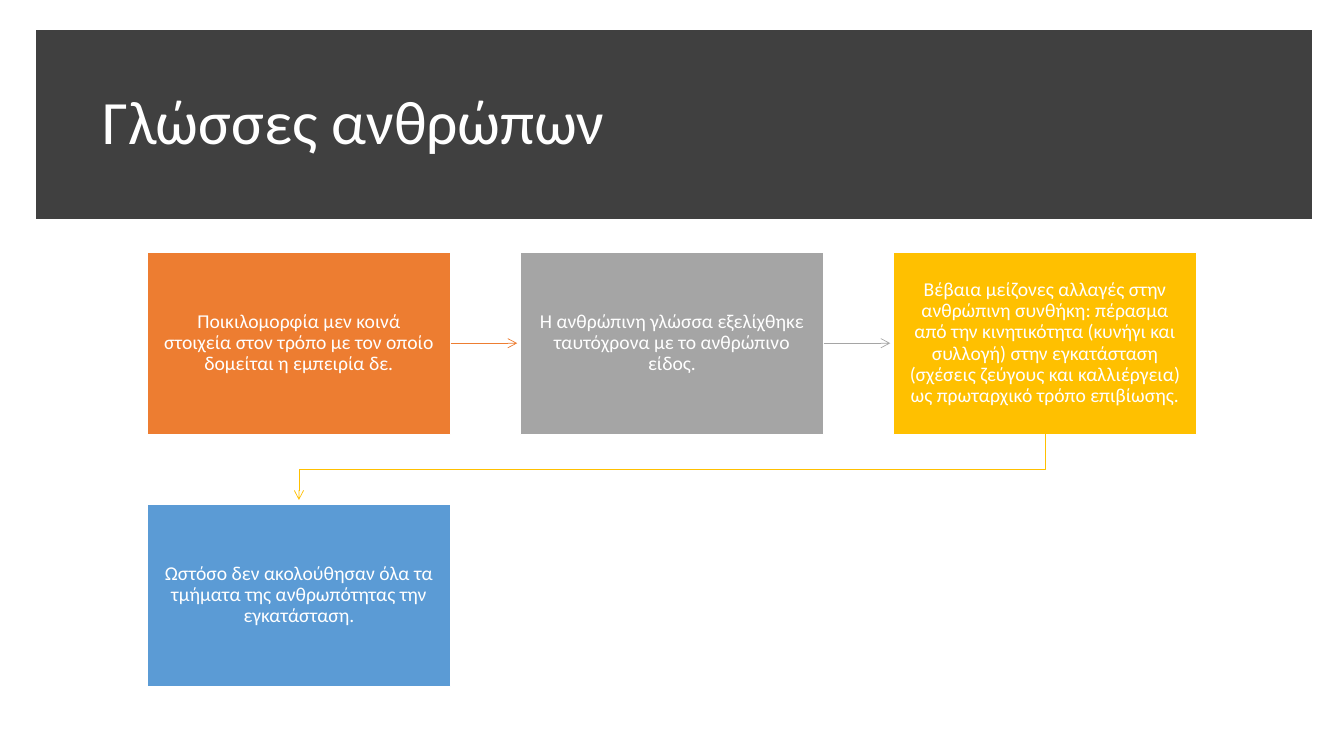
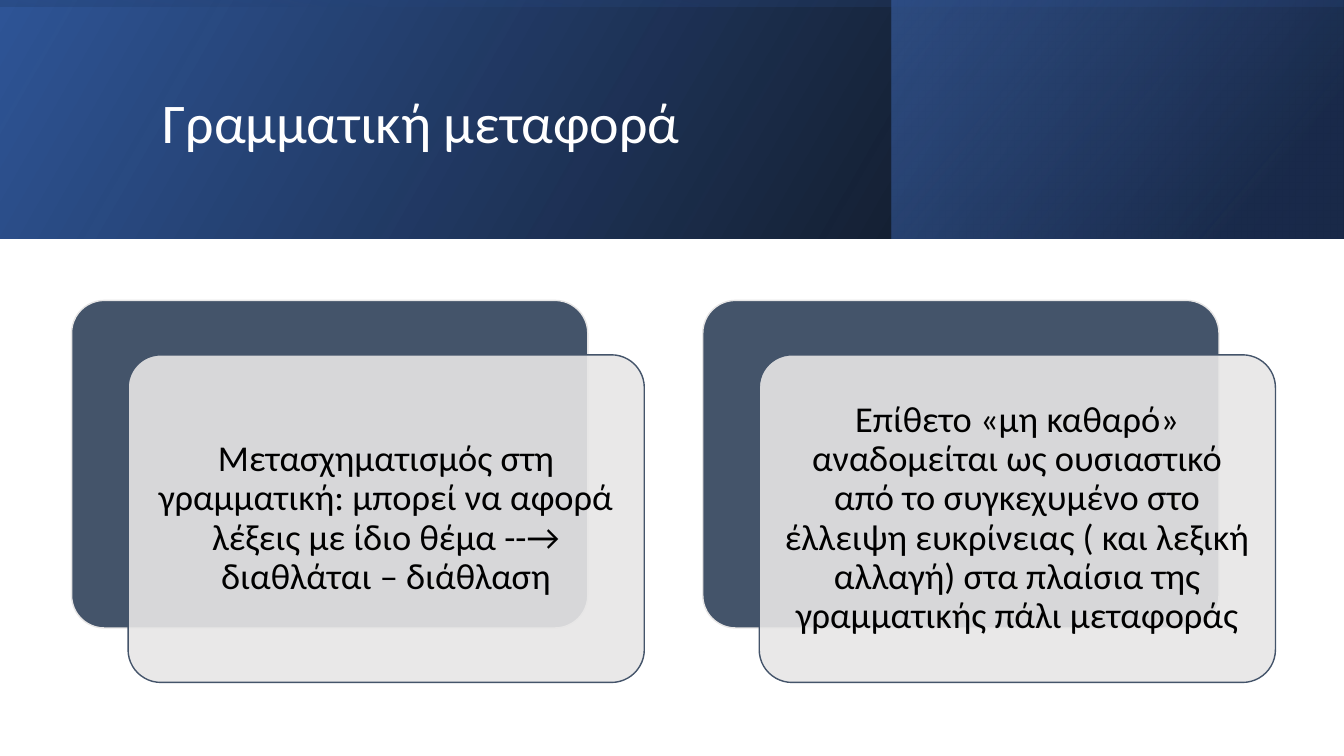
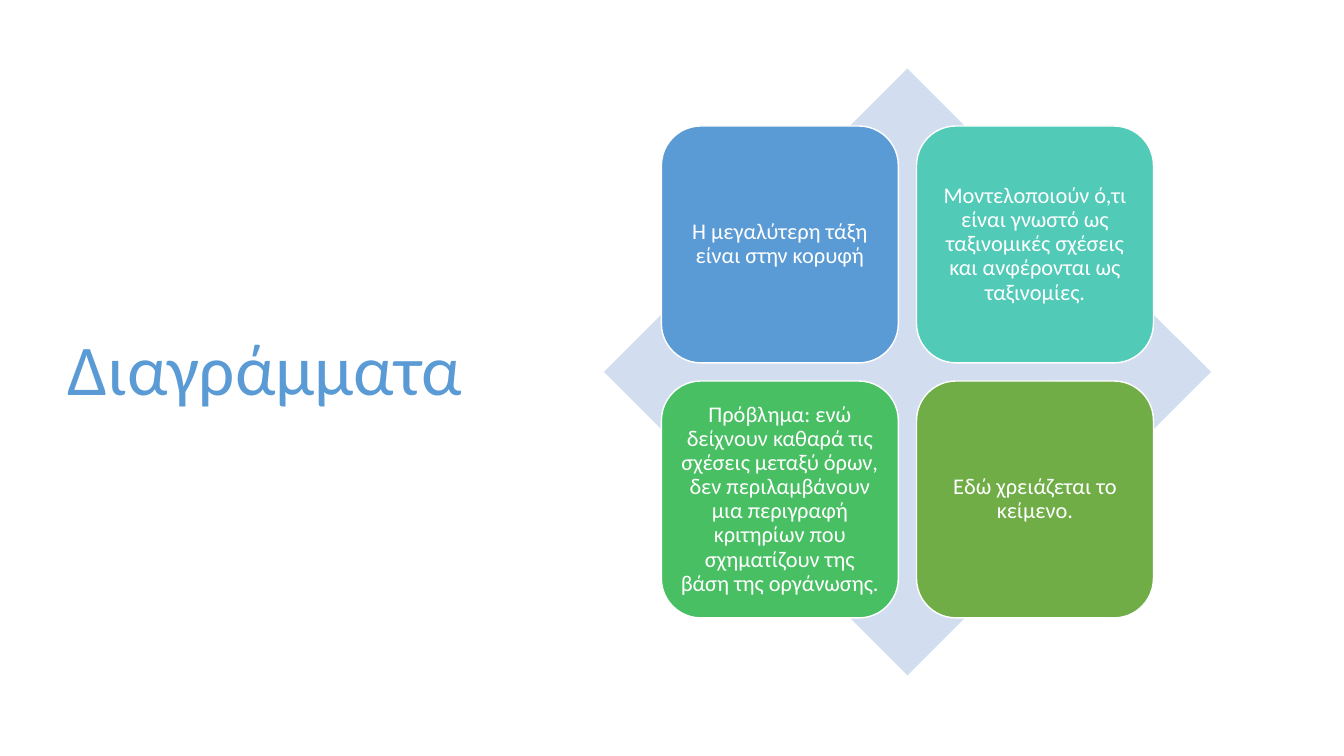
"""Build three slides on language: a process, a pair of cards and a matrix."""
from dataclasses import dataclass

from pptx import Presentation
from pptx import slide as sl
from pptx import util as u
from pptx.dml import color, line
from pptx.enum import shapes, text
from pptx.oxml import ns, parse_xml
from pptx.shapes import autoshape

Inches, Pt, RGB = u.Inches, u.Pt, color.RGBColor
Kind = shapes.MSO_SHAPE

FONT = "Calibri"
LINE_SPACING = 0.9
WHITE = RGB(0xFF, 0xFF, 0xFF)
BLACK = RGB(0x00, 0x00, 0x00)
CHARCOAL = RGB(0x40, 0x40, 0x40)
ORANGE = RGB(0xED, 0x7D, 0x31)
GRAY = RGB(0xA5, 0xA5, 0xA5)
GOLD = RGB(0xFF, 0xC0, 0x00)
BLUE = RGB(0x5B, 0x9B, 0xD5)
TEAL = RGB(0x52, 0xCA, 0xB8)
GREEN = RGB(0x49, 0xBF, 0x64)
OLIVE = RGB(0x70, 0xAD, 0x47)
PALE_BLUE = RGB(0xD2, 0xDE, 0xEF)
SLATE = RGB(0x44, 0x54, 0x6A)
LIGHT_GRAY = RGB(0xE7, 0xE6, 0xE6)
ROYAL = RGB(0x2F, 0x55, 0x97)
NAVY = RGB(0x20, 0x38, 0x64)
AZURE = RGB(0x44, 0x72, 0xC4)


@dataclass(frozen=True)
class Rect:
    left: float
    top: float
    width: float
    height: float

    def emu(self) -> tuple[int, ...]:
        return tuple(Inches(v) for v in (self.left, self.top, self.width, self.height))


@dataclass(frozen=True)
class Label:
    size: float
    color: RGB
    margin: float


@dataclass(frozen=True)
class Card:
    text: str
    fill: RGB
    col: int
    row: int


@dataclass(frozen=True)
class Stop:
    position: int
    color: RGB
    opacity: int = 100


@dataclass(frozen=True)
class GradientBand:
    rect: Rect
    angle: int
    stops: tuple[Stop, ...]
    rotation: int = 0


STEP_LABEL = Label(14, WHITE, 0.15)
STEPS = (
    Card("Ποικιλομορφία μεν κοινά στοιχεία στον τρόπο με τον οποίο δομείται η "
         "εμπειρία δε.", ORANGE, 0, 0),
    Card("Η ανθρώπινη γλώσσα εξελίχθηκε ταυτόχρονα με το ανθρώπινο είδος.",
         GRAY, 1, 0),
    Card("Βέβαια μείζονες αλλαγές στην ανθρώπινη συνθήκη: πέρασμα από την "
         "κινητικότητα (κυνήγι και συλλογή) στην εγκατάσταση (σχέσεις ζεύγους και "
         "καλλιέργεια) ως πρωταρχικό τρόπο επιβίωσης.", GOLD, 2, 0),
    Card("Ωστόσο δεν ακολούθησαν όλα τα τμήματα της ανθρωπότητας την εγκατάσταση.",
         BLUE, 0, 1),
)

GRADIENT_BANDS = (
    GradientBand(Rect(0, 0, 13.33, 2.37), 330, (Stop(0, BLACK, 96), Stop(100, ROYAL))),
    GradientBand(Rect(8.84, 0, 4.48, 2.37), 320,
                 (Stop(19, NAVY, 68), Stop(100, AZURE, 48))),
    GradientBand(Rect(5.48, -5.48, 2.37, 13.33), 350,
                 (Stop(23, ROYAL, 16), Stop(99, BLACK, 45)), 270),
)
METAPHOR_LABEL = Label(26, BLACK, 0.11)
METAPHORS = (
    "Μετασχηματισμός στη γραμματική: μπορεί να αφορά λέξεις με ίδιο θέμα --→ "
    "διαθλάται – διάθλαση",
    "Επίθετο «μη καθαρό» αναδομείται ως ουσιαστικό από το συγκεχυμένο στο έλλειψη "
    "ευκρίνειας ( και λεξική αλλαγή) στα πλαίσια της γραμματικής πάλι μεταφοράς",
)

MATRIX_LABEL = Label(16, WHITE, 0.07)
MATRIX = (
    Card("Η μεγαλύτερη τάξη είναι στην κορυφή", BLUE, 0, 0),
    Card("Μοντελοποιούν ό,τι είναι γνωστό ως ταξινομικές σχέσεις και ανφέρονται ως "
         "ταξινομίες.", TEAL, 1, 0),
    Card("Πρόβλημα: ενώ δείχνουν καθαρά τις σχέσεις μεταξύ όρων, δεν περιλαμβάνουν "
         "μια περιγραφή κριτηρίων που σχηματίζουν της βάση της οργάνωσης.", GREEN, 0, 1),
    Card("Εδώ χρειάζεται το κείμενο.", OLIVE, 1, 1),
)


def write(tf, content: str, size: float, rgb: RGB, align: text.PP_ALIGN) -> None:
    tf.text = content
    tf.word_wrap = True
    tf.auto_size = text.MSO_AUTO_SIZE.NONE
    tf.vertical_anchor = text.MSO_ANCHOR.MIDDLE
    p = tf.paragraphs[0]
    p.alignment = align
    p.line_spacing = LINE_SPACING
    r = p.runs[0]
    r.font.name = FONT
    r.font.size = Pt(size)
    r.font.color.rgb = rgb


def add_title(s: sl.Slide, content: str, rect: Rect, size: float, rgb: RGB) -> None:
    title = s.shapes.title
    title.left, title.top, title.width, title.height = rect.emu()
    write(title.text_frame, content, size, rgb, text.PP_ALIGN.LEFT)
    s.shapes._spTree.append(title._element)


def add_box(s: sl.Slide, kind: Kind, rect: Rect, fill: RGB,
            outline: RGB | None = None, weight: float = 1) -> autoshape.Shape:
    sp = s.shapes.add_shape(kind, *rect.emu())
    sp.shadow.inherit = False
    sp.fill.solid()
    sp.fill.fore_color.rgb = fill
    if outline is None:
        sp.line.fill.background()
    else:
        sp.line.color.rgb = outline
        sp.line.width = Pt(weight)
    return sp


def add_label(sp: autoshape.Shape, content: str, label: Label) -> None:
    tf = sp.text_frame
    tf.margin_left = tf.margin_right = Inches(label.margin)
    tf.margin_top = tf.margin_bottom = Inches(label.margin)
    write(tf, content, label.size, label.color, text.PP_ALIGN.CENTER)


def add_gradient_band(s: sl.Slide, band: GradientBand) -> None:
    sp = add_box(s, Kind.RECTANGLE, band.rect, BLACK)
    sp.rotation = band.rotation
    spPr = sp._element.spPr
    spPr.find(ns.qn("a:xfrm")).set("flipH", "1")
    stops = "".join(
        f'<a:gs pos="{stop.position * 1000}"><a:srgbClr val="{stop.color}">'
        f'<a:alpha val="{stop.opacity * 1000}"/></a:srgbClr></a:gs>'
        for stop in band.stops)
    gradient = parse_xml(
        f'<a:gradFill {ns.nsdecls("a")} rotWithShape="1"><a:gsLst>{stops}</a:gsLst>'
        f'<a:lin ang="{band.angle * 60000}" scaled="0"/></a:gradFill>')
    spPr.replace(spPr.find(ns.qn("a:solidFill")), gradient)


def format_arrow(ln: line.LineFormat, rgb: RGB) -> None:
    ln.color.rgb = rgb
    ln.width = Pt(0.5)
    ln._get_or_add_ln().append(
        parse_xml(f'<a:tailEnd {ns.nsdecls("a")} type="arrow"/>'))


def add_side_arrow(s: sl.Slide, box: autoshape.Shape, rgb: RGB) -> None:
    x, y = box.left + box.width, box.top + box.height // 2
    arrow = s.shapes.add_connector(
        shapes.MSO_CONNECTOR.STRAIGHT, x, y, x + Inches(0.66), y)
    arrow.begin_connect(box, 3)
    format_arrow(arrow.line, rgb)
    arrow._element.spPr.append(parse_xml(f'<a:effectLst {ns.nsdecls("a")}/>'))


def add_return_arrow(s: sl.Slide, start: autoshape.Shape, end: autoshape.Shape,
                     rgb: RGB) -> None:
    x1, y1 = start.left + start.width // 2, start.top + start.height
    x2, y2 = end.left + end.width // 2, end.top - Inches(0.04)
    bend = (y1 + end.top) // 2
    builder = s.shapes.build_freeform(x1, y1)
    builder.add_line_segments([(x1, bend), (x2, bend), (x2, y2)], close=False)
    arrow = builder.convert_to_shape()
    arrow.shadow.inherit = False
    arrow.fill.background()
    format_arrow(arrow.line, rgb)


def build_process(s: sl.Slide) -> None:
    band = add_box(s, Kind.RECTANGLE, Rect(0.43, 0.37, 12.51, 1.73),
                   CHARCOAL, CHARCOAL, 10)
    band.line._get_or_add_ln().append(
        parse_xml(f'<a:miter {ns.nsdecls("a")} lim="800000"/>'))
    add_title(s, "Γλώσσες ανθρώπων", Rect(0.92, 0.51, 11.5, 1.45), 44, WHITE)
    boxes = []
    for step in STEPS:
        rect = Rect(1.46 + 3.7 * step.col, 2.5 + 2.5 * step.row, 3.01, 1.81)
        box = add_box(s, Kind.RECTANGLE, rect, step.fill, WHITE)
        add_label(box, step.text, STEP_LABEL)
        boxes.append(box)
    for box, step in zip(boxes[:2], STEPS):
        add_side_arrow(s, box, step.fill)
    add_return_arrow(s, boxes[2], boxes[3], GOLD)


def build_metaphors(s: sl.Slide) -> None:
    for band in GRADIENT_BANDS:
        add_gradient_band(s, band)
    add_title(s, "Γραμματική μεταφορά", Rect(1.51, 0.38, 10.63, 1.72), 40, WHITE)
    for i, content in enumerate(METAPHORS):
        left = 0.71 + 6.26 * i
        back = add_box(s, Kind.ROUNDED_RECTANGLE, Rect(left, 2.98, 5.12, 3.25),
                       SLATE, LIGHT_GRAY)
        front = add_box(s, Kind.ROUNDED_RECTANGLE, Rect(left + 0.56, 3.52, 5.12, 3.25),
                        LIGHT_GRAY, SLATE)
        back.adjustments[0] = front.adjustments[0] = 0.1
        tint = front._element.spPr.find(ns.qn("a:solidFill"))[0]
        tint.append(parse_xml(f'<a:alpha {ns.nsdecls("a")} val="90000"/>'))
        add_label(front, content, METAPHOR_LABEL)


def build_matrix(s: sl.Slide) -> None:
    add_title(s, "Διαγράμματα", Rect(0.57, 0.68, 4.16, 6.02), 51, BLUE)
    add_box(s, Kind.DIAMOND, Rect(5.99, 0.68, 6.02, 6.02), PALE_BLUE)
    for card in MATRIX:
        rect = Rect(6.56 + 2.53 * card.col, 1.25 + 2.53 * card.row, 2.35, 2.35)
        box = add_box(s, Kind.ROUNDED_RECTANGLE, rect, card.fill, WHITE)
        add_label(box, card.text, MATRIX_LABEL)


def main() -> None:
    prs = Presentation()
    prs.slide_width, prs.slide_height = Inches(13.33), Inches(7.5)
    for build in (build_process, build_metaphors, build_matrix):
        build(prs.slides.add_slide(prs.slide_layouts[5]))
    prs.save("out.pptx")


if __name__ == "__main__":
    main()
